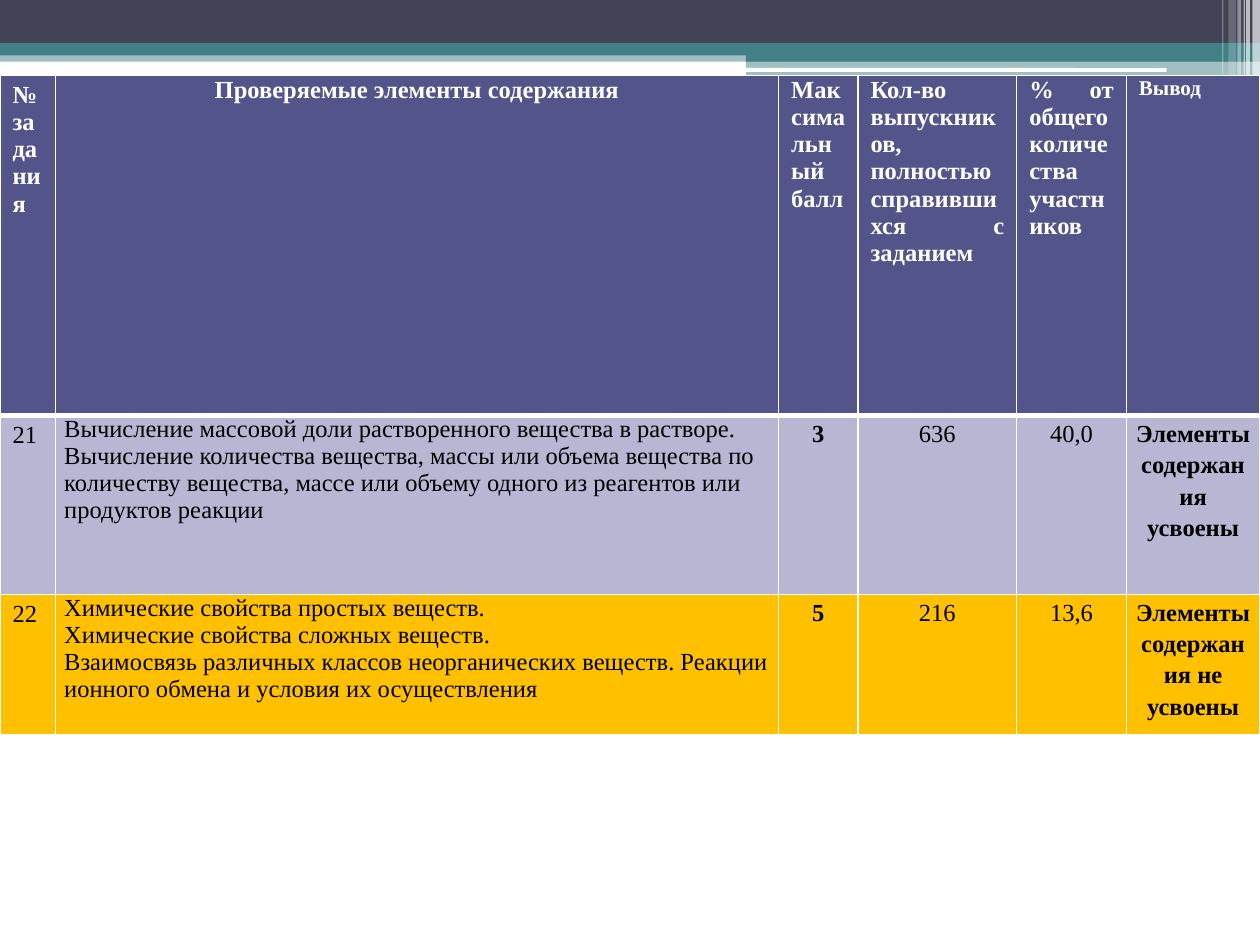
"""Builds the slide with results for exam tasks 21 and 22."""
from dataclasses import dataclass

from lxml import etree
from pptx import Presentation
from pptx.dml.color import RGBColor
from pptx.enum.shapes import MSO_SHAPE
from pptx.enum.text import PP_ALIGN
from pptx.oxml.ns import qn
from pptx.util import Inches, Pt

RECT, ROUNDED = MSO_SHAPE.RECTANGLE, MSO_SHAPE.ROUNDED_RECTANGLE
LEFT, CENTER, JUSTIFY = PP_ALIGN.LEFT, PP_ALIGN.CENTER, PP_ALIGN.JUSTIFY

WHITE = RGBColor(0xFF, 0xFF, 0xFF)
BLACK = RGBColor(0x00, 0x00, 0x00)
SLATE = RGBColor(0x42, 0x44, 0x56)
TEAL = RGBColor(0x43, 0x80, 0x86)
INDIGO = RGBColor(0x53, 0x54, 0x8A)
LAVENDER = RGBColor(0xB7, 0xB7, 0xD4)
AMBER = RGBColor(0xFF, 0xC0, 0x00)

FONT = "Times New Roman"
COLUMN_WIDTHS = (0.44, 5.74, 0.63, 1.26, 0.87, 1.06)
ROW_HEIGHTS = (2.7, 1.42, 1.11)


@dataclass(frozen=True)
class Band:
    left: float
    top: float
    width: float
    height: float
    color: RGBColor = WHITE
    opacity: int = 100
    kind: MSO_SHAPE = RECT


@dataclass(frozen=True)
class CellStyle:
    insets: tuple[float, float, float, float] = (0.1, 0.05, 0.1, 0.05)
    align: PP_ALIGN = LEFT
    bold: bool = False
    color: RGBColor = BLACK
    size: int = 14
    spacing: float = 1.0


@dataclass(frozen=True)
class TableRow:
    fill: RGBColor
    texts: tuple[str, ...]
    styles: tuple[CellStyle, ...]
    top_border: int = 1
    bottom_border: int = 1


BANDS = (
    Band(0, 0.4, 10, 0.09, TEAL, 50),
    Band(0, 0, 10, 0.34, SLATE),
    Band(0, 0.34, 10, 0.1, TEAL),
    Band(5.92, 0.39, 4.08, 0.1, TEAL),
    Band(5.92, 0.48, 4.08, 0.2, TEAL, 50),
    Band(5.91, 0.54, 3.35, 0.03, kind=ROUNDED),
    Band(8.06, 0.64, 1.75, 0.04, kind=ROUNDED),
    Band(9.94, 0, 0.06, 0.68, opacity=65),
    Band(9.89, 0, 0.03, 0.68, opacity=65),
    Band(9.87, 0, 0.01, 0.68, opacity=60),
    Band(9.82, 0, 0.03, 0.68, opacity=40),
    Band(9.75, 0, 0.06, 0.64, opacity=20),
    Band(9.7, 0, 0.01, 0.64, opacity=30),
)

NARROW = (0.07, 0.01, 0.07, 0)
HEADING_INSETS = (0.1, 0.01, 0.1, 0.05)
NUMBER_HEADING = CellStyle(align=JUSTIFY, bold=True, color=WHITE)
TOPIC_HEADING = CellStyle(NARROW, CENTER, True, WHITE)
HEADING = CellStyle(HEADING_INSETS, JUSTIFY, True, WHITE)
VERDICT_HEADING = CellStyle(HEADING_INSETS, JUSTIFY, True, WHITE, size=12)
TOPIC = CellStyle((0.07, 0, 0.08, 0))
FIGURE = CellStyle(NARROW, CENTER, spacing=1.15)
STRONG = CellStyle(NARROW, CENTER, True, spacing=1.15)
HEADING_STYLES = (NUMBER_HEADING, TOPIC_HEADING, HEADING, HEADING, HEADING, VERDICT_HEADING)
TASK_STYLES = (CellStyle(), TOPIC, STRONG, FIGURE, FIGURE, STRONG)

ROWS = (
    TableRow(INDIGO, (
        "№\nзадания",
        "Проверяемые элементы содержания",
        "Максимальный балл",
        "Кол-во выпускников, полностью справившихся с заданием",
        "% от общего количества участников",
        "Вывод",
    ), HEADING_STYLES, bottom_border=3),
    TableRow(LAVENDER, (
        "21",
        "Вычисление массовой доли растворенного вещества в растворе. "
        "Вычисление количества вещества, массы или объема вещества по количеству "
        "вещества, массе или объему одного из реагентов или продуктов реакции",
        "3", "636", "40,0",
        "Элементы содержания усвоены",
    ), TASK_STYLES, top_border=3),
    TableRow(AMBER, (
        "22",
        "Химические свойства простых веществ.\n"
        "Химические свойства сложных веществ.\n"
        "Взаимосвязь различных классов неорганических веществ. "
        "Реакции ионного обмена и условия их осуществления",
        "5", "216", "13,6",
        "Элементы содержания не\nусвоены",
    ), TASK_STYLES),
)


def draw_band(slide, band: Band) -> None:
    stripe = slide.shapes.add_shape(
        band.kind, Inches(band.left), Inches(band.top), Inches(band.width), Inches(band.height))
    stripe.shadow.inherit = False
    stripe.line.fill.background()
    stripe.fill.solid()
    stripe.fill.fore_color.rgb = band.color
    if band.opacity < 100:
        color = stripe.fill._xPr.find(".//" + qn("a:srgbClr"))
        etree.SubElement(color, qn("a:alpha"), val=str(band.opacity * 1000))


def write_text(frame, text: str, *, align: PP_ALIGN, bold: bool, color: RGBColor,
               size: int, spacing: float) -> None:
    frame.word_wrap = True
    frame.text = text
    for paragraph in frame.paragraphs:
        paragraph.alignment = align
        paragraph.line_spacing = spacing
        for run in paragraph.runs:
            run.font.name = FONT
            run.font.size = Pt(size)
            run.font.bold = bold
            run.font.color.rgb = color


def draw_borders(cell, top: int, bottom: int) -> None:
    properties = cell._tc.get_or_add_tcPr()
    for side, width in (("L", 1), ("R", 1), ("T", top), ("B", bottom)):
        border = etree.SubElement(properties, qn(f"a:ln{side}"), w=str(Pt(width)))
        fill = etree.SubElement(border, qn("a:solidFill"))
        etree.SubElement(fill, qn("a:srgbClr"), val=str(WHITE))


def fill_row(cells, row: TableRow) -> None:
    for cell, text, style in zip(cells, row.texts, row.styles):
        draw_borders(cell, row.top_border, row.bottom_border)
        cell.fill.solid()
        cell.fill.fore_color.rgb = row.fill
        (cell.margin_left, cell.margin_top,
         cell.margin_right, cell.margin_bottom) = map(Inches, style.insets)
        write_text(cell.text_frame, text, align=style.align, bold=style.bold,
                   color=style.color, size=style.size, spacing=style.spacing)


def draw_results(slide) -> None:
    results = slide.shapes.add_table(
        len(ROW_HEIGHTS), len(COLUMN_WIDTHS), Inches(0), Inches(0.6),
        Inches(sum(COLUMN_WIDTHS)), Inches(sum(ROW_HEIGHTS))).table
    for column, width in zip(results.columns, COLUMN_WIDTHS):
        column.width = Inches(width)
    for table_row, height, row in zip(results.rows, ROW_HEIGHTS, ROWS):
        table_row.height = Inches(height)
        fill_row(table_row.cells, row)


def main() -> None:
    presentation = Presentation()
    presentation.slide_width = Inches(10)
    presentation.slide_height = Inches(7.5)
    slide = presentation.slides.add_slide(presentation.slide_layouts[6])
    for band in BANDS:
        draw_band(slide, band)
    draw_results(slide)
    presentation.save("out.pptx")


if __name__ == "__main__":
    main()
